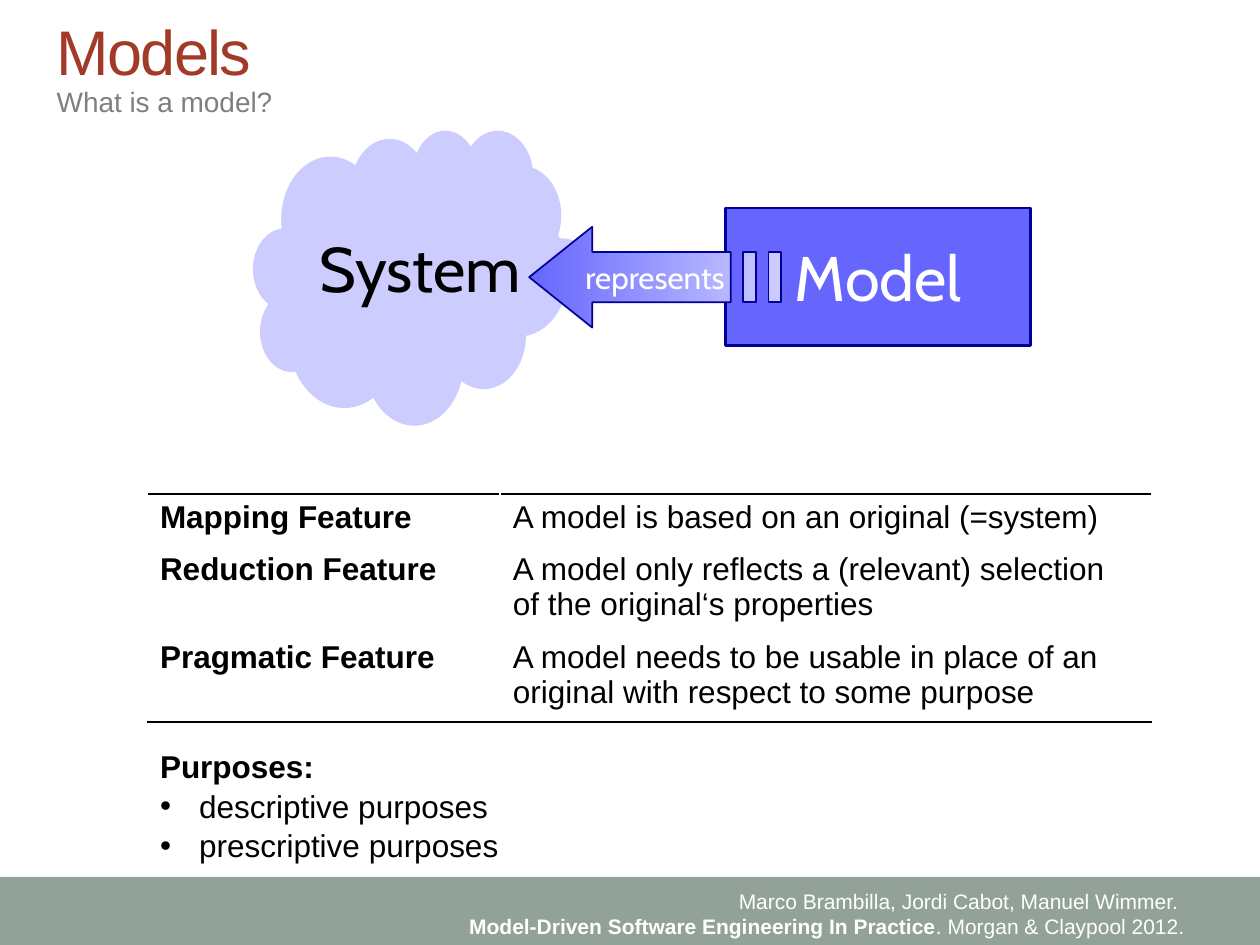
"""Build a slide that explains what a model is, with a diagram, a feature table and purposes."""
import pptx
import pptx.dml.color
import pptx.enum.shapes
import pptx.enum.text
import pptx.oxml.ns
import pptx.util
from lxml import etree

ALIGN = pptx.enum.text.PP_ALIGN
ANCHOR = pptx.enum.text.MSO_ANCHOR
SHAPE = pptx.enum.shapes.MSO_SHAPE
qn = pptx.oxml.ns.qn


def paint(fill, *colours):
    """Fill with one colour, or with a left-to-right gradient of two."""
    if len(colours) == 1:
        fill.solid()
        fill.fore_color.rgb = pptx.dml.color.RGBColor.from_string(colours[0])
        return
    fill.gradient()
    fill.gradient_angle = 0
    for stop, colour in zip(fill.gradient_stops, colours):
        stop.color.rgb = pptx.dml.color.RGBColor.from_string(colour)


def write(paragraph, text, size=18, font="Arial", colour="000000", bold=False,
          align=ALIGN.LEFT, before=0, line_spacing=1.0):
    """Add a formatted run to a paragraph and return the run."""
    paragraph.alignment = align
    paragraph.space_before = pptx.util.Pt(before)
    paragraph.line_spacing = line_spacing
    run = paragraph.add_run()
    run.text = text
    run.font.size = pptx.util.Pt(size)
    run.font.name = font
    run.font.bold = bold
    paint(run.font.fill, colour)
    return run


presentation = pptx.Presentation()
presentation.slide_width = pptx.util.Inches(10)
presentation.slide_height = pptx.util.Inches(7.5)
slide = presentation.slides.add_slide(presentation.slide_layouts[3])
shapes = slide.shapes

unit = presentation.slide_width // 100
grid = {
    "band": (0, 69.6, 100, 5.4),
    "credit": (29.4, 70, 65.6, 5),
    "title": (3.5, 1.7, 93.3, 4.6),
    "subtitle": (3.5, 6.2, 93.3, 3.9),
    "features": (11.7, 39.2, 79.7, 17.3),
    "model": (57.6, 16.5, 24.2, 10.9),
    "cloud": (20.1, 10.3, 25, 23.4),
    "system": (23.9, 18.9, 18.9, 5.9),
    "purposes": (11.7, 58.8, 85.2, 10.1),
}
places = {name: [round(unit * value) for value in box] for name, box in grid.items()}

band = shapes.add_shape(SHAPE.RECTANGLE, *places["band"])
band.shadow.inherit = False
paint(band.fill, "93A299")
band.line.fill.background()

credit = shapes.add_textbox(*places["credit"]).text_frame
credit.word_wrap = True
credit_style = dict(size=12, colour="FFFFFF", align=ALIGN.RIGHT)
write(credit.paragraphs[0], "Marco Brambilla, Jordi Cabot, Manuel Wimmer. ", **credit_style)
book = credit.add_paragraph()
write(book, "Model-Driven Software Engineering In Practice", bold=True, **credit_style)
write(book, ". Morgan & Claypool 2012.", **credit_style)

title, subtitle, purposes = slide.placeholders
for name, shape in zip(("title", "subtitle", "purposes"), slide.placeholders):
    shape.left, shape.top, shape.width, shape.height = places[name]
    shape.text_frame.auto_size = pptx.enum.text.MSO_AUTO_SIZE.NONE
    shape.text_frame.vertical_anchor = ANCHOR.MIDDLE if name == "title" else ANCHOR.TOP

heading = write(title.text_frame.paragraphs[0], "Models", size=36, colour="A23A28")
heading.font._element.set("spc", "-100")

entries = [
    (subtitle.text_frame.paragraphs[0], "What is a model?", None, dict(size=16, colour="7F7F7F")),
    (purposes.text_frame.paragraphs[0], "Purposes:", None, dict(bold=True)),
    (purposes.text_frame.add_paragraph(), "descriptive purposes", "•", dict(before=1)),
    (purposes.text_frame.add_paragraph(), "prescriptive purposes", "•", dict(before=1)),
]
for paragraph, text, bullet, style in entries:
    properties = paragraph._p.get_or_add_pPr()
    indent = round(3.1 * unit) if bullet else 0
    properties.set("marL", str(indent))
    properties.set("indent", str(-indent))
    if bullet:
        etree.SubElement(properties, qn("a:buFont"), typeface="Arial")
        etree.SubElement(properties, qn("a:buChar"), char=bullet)
    else:
        etree.SubElement(properties, qn("a:buNone"))
    write(paragraph, text, **style)

features = [
    ("Mapping Feature", "A model is based on an original (=system)"),
    ("Reduction Feature",
     "A model only reflects a (relevant) selection of the original‘s properties"),
    ("Pragmatic Feature",
     "A model needs to be usable in place of an original with respect to some purpose"),
]
table = shapes.add_table(len(features), 2, *places["features"]).table
table.first_row = table.horz_banding = False
for column, width in zip(table.columns, (28, 51.7)):
    column.width = round(unit * width)
for row, height in zip(table.rows, (4.1, 6.6, 6.6)):
    row.height = round(unit * height)
edges = {0: "a:lnT", len(features) - 1: "a:lnB"}
for row_index, texts in enumerate(features):
    for column_index, text in enumerate(texts):
        cell = table.cell(row_index, column_index)
        paint(cell.fill, "FFFFFF")
        write(cell.text_frame.paragraphs[0], text, bold=column_index == 0)
        if row_index in edges:
            border = etree.Element(qn(edges[row_index]), w=str(pptx.util.Pt(1)))
            border_fill = etree.SubElement(border, qn("a:solidFill"))
            etree.SubElement(border_fill, qn("a:srgbClr"), val="000000")
            cell._tc.get_or_add_tcPr().insert(0, border)

model = shapes.add_shape(SHAPE.RECTANGLE, *places["model"])
cloud = shapes.add_shape(SHAPE.CLOUD_CALLOUT, *places["cloud"])
cloud.adjustments[0], cloud.adjustments[1] = 0.4, -0.04
cloud.line.fill.background()

top, bottom = 20, 23.9
head = [(46.8, 18.1), (46.8, top), (58.4, top), (58.4, bottom),
        (46.8, bottom), (46.8, 25.9), (42, 22)]
stripes = [[(right, top), (right, bottom), (left, bottom), (left, top)]
           for left, right in ((59, 60.3), (60.9, 61.5))]
builder = shapes.build_freeform(*head[0], scale=unit)
builder.add_line_segments(head[1:], close=True)
for stripe in stripes:
    builder.move_to(*stripe[0])
    builder.add_line_segments(stripe[1:], close=True)
arrow = builder.convert_to_shape()

for shape, colours, line_width in ((model, ["6666FF"], 1.5), (cloud, ["CCCCFF"], 0),
                                   (arrow, ["6666FF", "CCCCFF"], 1)):
    shape.shadow.inherit = False
    paint(shape.fill, *colours)
    if line_width:
        paint(shape.line.fill, "000099")
        shape.line.width = pptx.util.Pt(line_width)

system = shapes.add_textbox(*places["system"])
labels = [
    (model, "Model", ANCHOR.MIDDLE, dict(size=36, colour="FFFFFF")),
    (arrow, "represents", ANCHOR.MIDDLE, dict(size=18, colour="FFFFFF")),
    (system, "System", ANCHOR.TOP, dict(size=36, line_spacing=0.8)),
]
for shape, text, anchor, style in labels:
    shape.text_frame.word_wrap = False
    shape.text_frame.vertical_anchor = anchor
    write(shape.text_frame.paragraphs[0], text, font="Cabin", align=ALIGN.CENTER, **style)

presentation.save("out.pptx")
